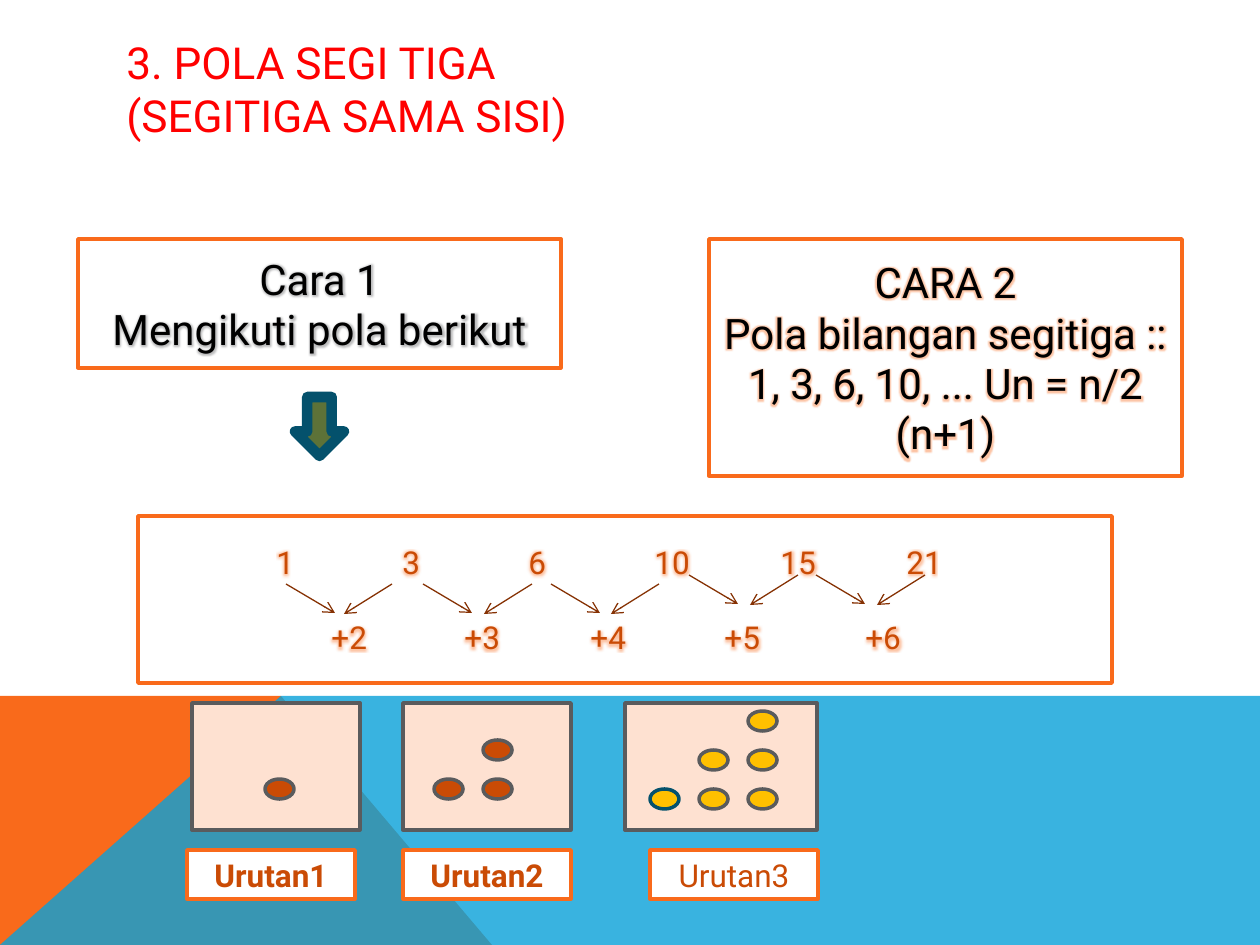
from dataclasses import dataclass

from lxml.etree import SubElement
from pptx import Presentation
from pptx.dml.color import RGBColor
from pptx.enum.shapes import MSO_CONNECTOR, MSO_SHAPE
from pptx.enum.text import MSO_ANCHOR, PP_ALIGN
from pptx.oxml import parse_xml
from pptx.oxml.ns import nsdecls, qn
from pptx.util import Pt

SCALE = 914400 / 126


@dataclass(frozen=True)
class Theme:
    font: str = "Roboto"
    white: str = "FFFFFF"
    black: str = "000000"
    red: str = "FF0000"
    orange: str = "F96A1B"
    rust: str = "CA4B05"
    brown: str = "863204"
    blue: str = "08A1D9"
    teal: str = "04516C"
    green: str = "5D7238"
    peach: str = "FEE1D1"
    gold: str = "FFC000"
    gray: str = "5A5B5D"
    title: float = 25.2
    large: int = 24
    body: int = 18


T = Theme()


def px(n):
    return round(n * SCALE)


def color(code):
    return RGBColor.from_string(code)


def add_glow(run, code):
    glow = parse_xml(
        f'<a:effectLst {nsdecls("a")}><a:glow rad="63500"><a:srgbClr val="{code}">'
        '<a:alpha val="40000"/></a:srgbClr></a:glow></a:effectLst>')
    run.font.fill._xPr.find(qn("a:solidFill")).addnext(glow)


def add_tabs(para, stops):
    tabs = SubElement(para._p.get_or_add_pPr(), qn("a:tabLst"))
    for stop in stops:
        SubElement(tabs, qn("a:tab"), pos=str(px(stop)), algn="l")


def write(shape, lines, size=T.body, ink=T.rust, align=PP_ALIGN.CENTER,
          bold=False, glow=None, tabs=None, gap=0):
    """Fill a shape with one paragraph per line; tabs holds the stops of each."""
    frame = shape.text_frame
    frame.word_wrap = True
    frame.vertical_anchor = MSO_ANCHOR.MIDDLE
    for i, line in enumerate(lines):
        para = frame.add_paragraph() if i else frame.paragraphs[0]
        para.alignment = align
        if i and gap:
            para.space_before = Pt(gap)
        if tabs:
            add_tabs(para, tabs[i])
        run = para.add_run()
        run.text = line
        font = run.font
        font.name, font.size, font.bold = T.font, Pt(size), bold
        font.color.rgb = color(ink)
        if glow:
            add_glow(run, glow)


def add_box(slide, x, y, w, h, fill=T.white, edge=T.orange, width=2,
            kind=MSO_SHAPE.RECTANGLE):
    shape = slide.shapes.add_shape(kind, px(x), px(y), px(w), px(h))
    shape.shadow.inherit = False
    shape.fill.solid()
    shape.fill.fore_color.rgb = color(fill)
    shape.line.color.rgb = color(edge)
    shape.line.width = Pt(width)
    return shape


def add_area(slide, points, fill, alpha=100):
    first, *rest = [(px(x), px(y)) for x, y in points]
    build = slide.shapes.build_freeform(*first)
    build.add_line_segments(rest, close=True)
    shape = build.convert_to_shape()
    shape.shadow.inherit = False
    shape.line.fill.background()
    shape.fill.solid()
    shape.fill.fore_color.rgb = color(fill)
    if alpha < 100:
        tone = shape.fill._xPr.find(qn("a:solidFill"))[0]
        SubElement(tone, qn("a:alpha"), val=str(alpha * 1000))


def add_arrow(slide, x, y, dx, dy):
    line = slide.shapes.add_connector(
        MSO_CONNECTOR.STRAIGHT, px(x), px(y), px(x + dx), px(y + dy))
    line.line.color.rgb = color(T.brown)
    line.line.width = Pt(0.75)
    SubElement(line.line._get_or_add_ln(), qn("a:tailEnd"), type="arrow")
    SubElement(line._element.spPr, qn("a:effectLst"))


def add_dots(slide, count, right, base, fill):
    """Draw a triangle of dots whose columns grow toward the right."""
    for col in range(count):
        for row in range(col + 1):
            corner = count == 3 and col == 0
            add_box(slide, right - 49 * (count - 1 - col), base - 39 * row, 29, 20,
                    fill, T.teal if corner else T.gray, kind=MSO_SHAPE.OVAL)


def add_series(slide):
    box = add_box(slide, 138, 516, 974, 167)
    terms = [1, 3, 6, 10, 15, 21]
    steps = [f"+{n}" for n in range(2, 7)]
    stops = [[126 * n for n in range(1, 7)], [181, 314, 440, 574, 715]]
    write(box, ["".join(f"\t{n}" for n in row) for row in (terms, steps)],
          align=PP_ALIGN.LEFT, glow=T.orange, tabs=stops, gap=21.5)
    for i, (left, right) in enumerate(
            [(286, 392), (423, 532), (551, 659), (689, 798), (816, 925)]):
        y = 584 if i < 3 else 575
        add_arrow(slide, left, y, 49, 29)
        add_arrow(slide, right, y, -48, 30)


def main():
    deck = Presentation()
    deck.slide_width, deck.slide_height = px(1260), px(945)
    slide = deck.slides.add_slide(deck.slide_layouts[6])

    add_area(slide, [(0, 945), (0, 696), (281, 696), (492, 945)], T.orange)
    add_area(slide, [(0, 945), (281, 696), (1260, 696), (1260, 945)], T.blue, 80)

    title = slide.shapes.add_textbox(px(114), px(50), px(1036), px(76))
    write(title, ["3. POLA SEGI TIGA", "(SEGITIGA SAMA SISI)"],
          size=T.title, ink=T.red, align=PP_ALIGN.LEFT)
    write(add_box(slide, 78, 239, 483, 129), ["Cara 1", "Mengikuti pola berikut"],
          size=T.large, ink=T.black, glow=T.gray)
    write(add_box(slide, 709, 239, 473, 237),
          ["CARA 2", "Pola bilangan segitiga :: 1, 3, 6, 10, ... Un = n/2 (n+1)"],
          size=T.large, ink=T.black, glow=T.orange)
    add_box(slide, 295, 397, 49, 59, T.green, T.teal, 6, MSO_SHAPE.DOWN_ARROW)
    add_series(slide)

    cards = [(192, 168, 187, 265, 779, T.rust), (403, 168, 403, 483, 779, T.rust),
             (625, 192, 650, 748, 789, T.gold)]
    for n, (x, w, label, right, base, fill) in enumerate(cards, 1):
        add_box(slide, x, 703, w, 127, T.peach, T.gray)
        add_dots(slide, n, right, base, fill)
        write(add_box(slide, label, 850, 168, 49), [f"Urutan{n}"], bold=n < 3)

    deck.save("out.pptx")


if __name__ == "__main__":
    main()
